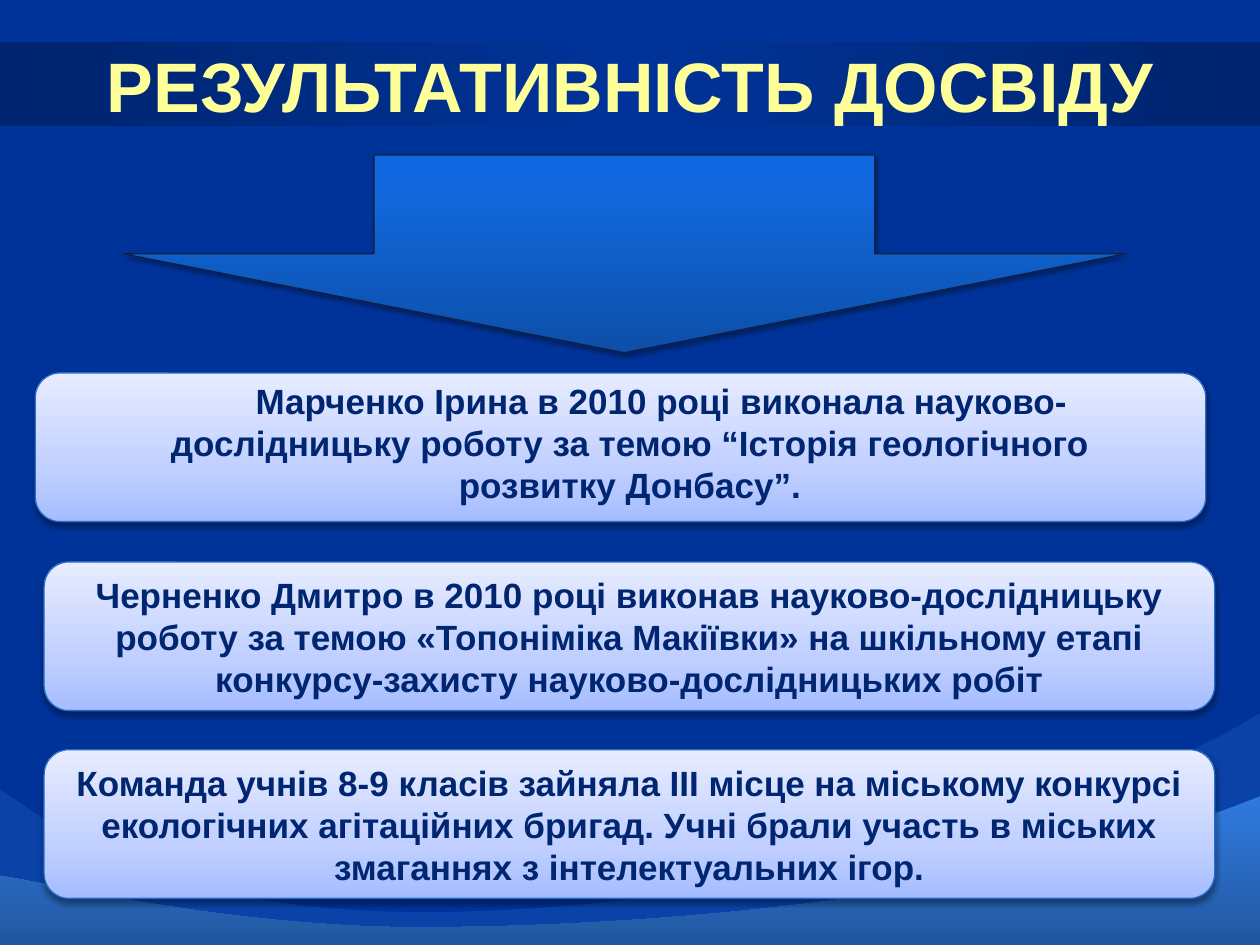
import pptx
import pptx.util
import pptx.dml.color
import pptx.enum.shapes
import pptx.enum.text
import pptx.oxml
import pptx.oxml.ns
from lxml import etree

Inches, Pt = pptx.util.Inches, pptx.util.Pt
SHAPE = pptx.enum.shapes.MSO_SHAPE
ANCHOR = pptx.enum.text.MSO_ANCHOR
rgb = pptx.dml.color.RGBColor.from_string
qn = pptx.oxml.ns.qn


def style(sp, stops, angle, line=None, shadow=None):
    """Gradient fill (clockwise angle), optional outline and (alpha, distance) shadow."""
    sp.shadow.inherit = False
    sp.fill.gradient()
    grad = sp._element.spPr.find(qn("a:gradFill"))
    gs_list = grad.find(qn("a:gsLst"))
    for gs in list(gs_list):
        gs_list.remove(gs)
    for pos, color in stops:
        gs = etree.SubElement(gs_list, qn("a:gs"), pos=str(pos * 1000))
        etree.SubElement(gs, qn("a:srgbClr"), val=color)
    grad.find(qn("a:lin")).set("ang", str(angle * 60000))
    if line:
        sp.line.color.rgb = rgb(line)
        sp.line.width = Pt(0.75)
    else:
        sp.line.fill.background()
    if shadow:
        alpha, dist = shadow
        effects = sp._element.spPr.find(qn("a:effectLst"))
        outer = etree.SubElement(
            effects, qn("a:outerShdw"), blurRad=str(Pt(3.1)), dist=str(Pt(dist)),
            dir="5400000", rotWithShape="0")
        color = etree.SubElement(outer, qn("a:srgbClr"), val="000000")
        etree.SubElement(color, qn("a:alpha"), val=str(alpha * 1000))


def write(sp, text, size, color, anchor):
    tf = sp.text_frame
    tf.word_wrap = True
    tf.vertical_anchor = anchor
    p = tf.paragraphs[0]
    p.alignment = pptx.enum.text.PP_ALIGN.CENTER
    r = p.add_run()
    r.text = text
    for name, value in {"name": "Arial", "size": Pt(size), "bold": True}.items():
        setattr(r.font, name, value)
    r.font.color.rgb = rgb(color)
    return p


prs = pptx.Presentation()
prs.slide_width, prs.slide_height = Inches(10), Inches(7.5)
s = prs.slides.add_slide(prs.slide_layouts[5])
s.background.fill.solid()
s.background.fill.fore_color.rgb = rgb("003399")

# Title band
band = s.shapes.add_shape(SHAPE.RECTANGLE, 0, Inches(0.33), Inches(10), Inches(0.67))
style(band, [(0, "00246D"), (50, "003399"), (100, "00246D")], 0)

# Waves along the bottom: start point, Bezier segments, bottom edge
waves = [
    ((0, 6.27), [((0.4, 6.51), (1.16, 7.25), (3.43, 7.24)),
                 ((5.7, 7.22), (8.49, 6.59), (10.02, 5.65))], 7.51),
    ((-0.01, 6.95), [((0.36, 7), (1.86, 7.38), (3.46, 7.36)),
                     ((5.06, 7.35), (7.97, 7.16), (10, 6.32))], 7.52),
]
STEPS = 30
wave_shapes = []
for start, segments, bottom in waves:
    points = [start]
    for b, c, d in segments:
        a = points[-1]
        for i in range(1, STEPS + 1):
            t = i / STEPS
            u = 1 - t
            points.append(tuple(
                u**3 * a[k] + 3 * u * u * t * b[k] + 3 * u * t * t * c[k] + t**3 * d[k]
                for k in (0, 1)))
    points += [(10, bottom), (0, bottom)]
    points = [(Inches(x), Inches(y)) for x, y in points]
    builder = s.shapes.build_freeform(*points[0])
    builder.add_line_segments(points[1:], close=True)
    wave_shapes.append(builder.convert_to_shape())

back_wave, front_wave = wave_shapes
back_wave.shadow.inherit = False
back_wave.line.fill.background()
back_wave.fill.solid()
back_wave.fill.fore_color.rgb = rgb("2F7ADF")
color = back_wave._element.spPr.find(qn("a:solidFill"))[0]
etree.SubElement(color, qn("a:alpha"), val="22000")
style(front_wave, [(0, "2F7ADF"), (100, "2257A0")], 90)

arrow = s.shapes.add_shape(
    SHAPE.DOWN_ARROW, Inches(0.98), Inches(1.23), Inches(7.95), Inches(1.57))
style(arrow, [(0, "0D4FA9"), (80, "1167DB"), (100, "0E67E0")], 270, "0F2145", (35, 1.8))

# Result cards
cards = []
for left, top in [(0.28, 2.96), (0.35, 4.46), (0.35, 5.95)]:
    card = s.shapes.add_shape(
        SHAPE.ROUNDED_RECTANGLE, Inches(left), Inches(top), Inches(9.29), Inches(1.18))
    style(card, [(0, "A5BCFF"), (35, "C0CFFF"), (100, "E7ECFF")], 270, "256BC9", (38, 1.6))
    cards.append(card)

first_text = s.shapes.add_textbox(Inches(0.75), Inches(2.96), Inches(8.5), Inches(1.11))
results = [
    "Марченко Ірина в 2010 році виконала науково-дослідницьку роботу за темою "
    "“Історія геологічного розвитку Донбасу”.",
    "Черненко Дмитро в 2010 році виконав науково-дослідницьку роботу за темою "
    "«Топоніміка Макіївки» на шкільному етапі конкурсу-захисту "
    "науково-дослідницьких робіт",
    "Команда учнів 8-9 класів зайняла ІІІ місце на міському конкурсі екологічних "
    "агітаційних бригад. Учні брали участь в міських змаганнях з інтелектуальних ігор.",
]
paragraphs = [write(sp, text, 20, "002671", ANCHOR.MIDDLE)
              for sp, text in zip([first_text] + cards[1:], results)]
paragraphs[0]._p.get_or_add_pPr().set("indent", str(Inches(0.5)))

# Title, brought in front of its band
title = s.shapes.title
title.left, title.top, title.width, title.height = 0, Inches(0.29), Inches(10), Inches(0.77)
write(title, "РЕЗУЛЬТАТИВНІСТЬ ДОСВІДУ", 40, "FFFF99", ANCHOR.TOP)
title.text_frame.auto_size = pptx.enum.text.MSO_AUTO_SIZE.NONE
s.shapes._spTree.append(title._element)

prs.save("out.pptx")
